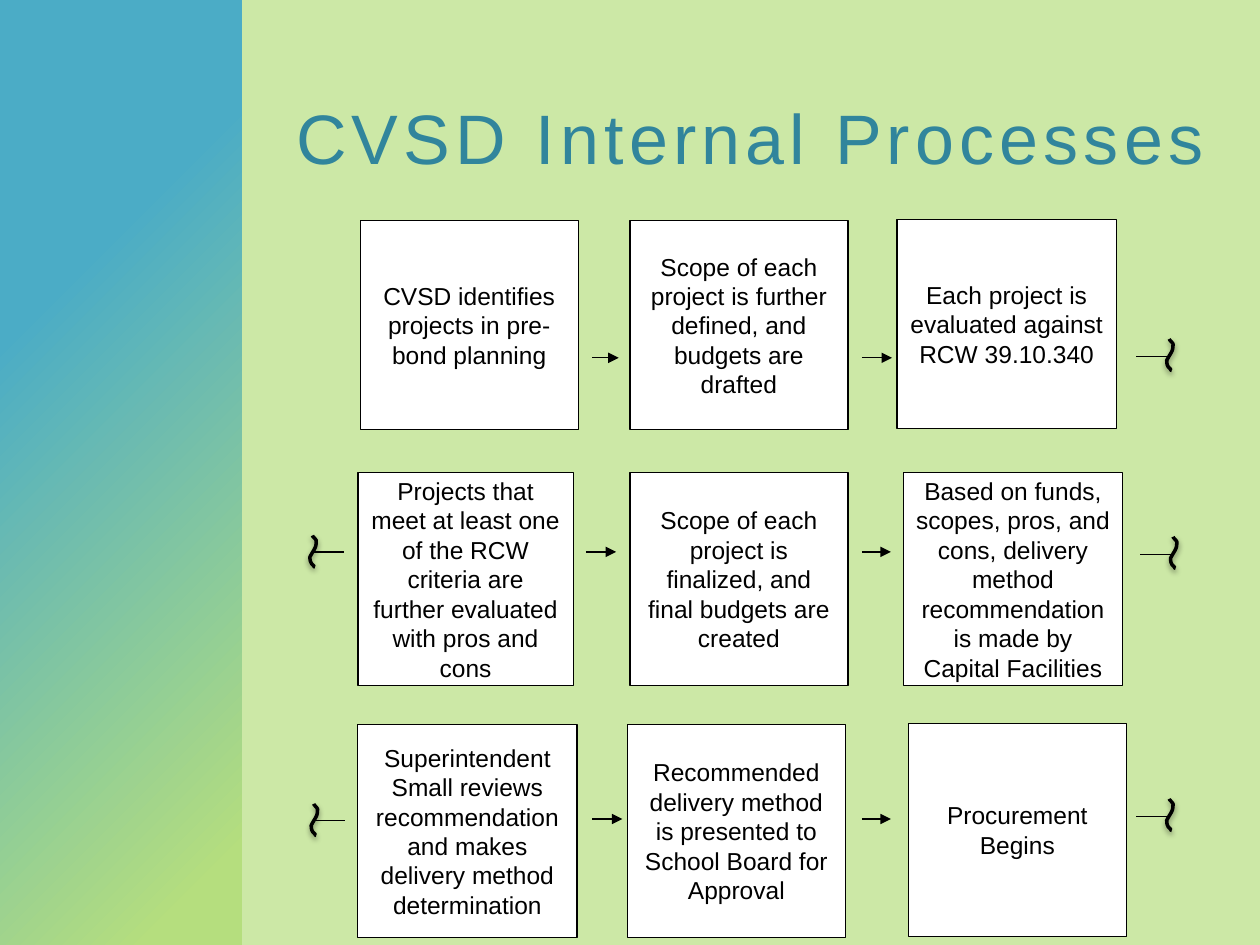
from lxml.etree import SubElement
from pptx import Presentation
from pptx.dml.color import RGBColor
from pptx.enum.shapes import MSO_CONNECTOR, MSO_SHAPE
from pptx.enum.text import MSO_ANCHOR, PP_ALIGN
from pptx.oxml.ns import qn
from pptx.util import Inches, Pt

COLORS = {
    "bg": "CCE8A6", "green": "B5DE7E", "blue": "4BACC6",
    "title": "31859C", "black": "000000", "white": "FFFFFF",
}
RGB = {name: RGBColor.from_string(value) for name, value in COLORS.items()}


def add_text(sp, text, size=14, color="black", align=PP_ALIGN.CENTER,
             anchor=MSO_ANCHOR.MIDDLE, margin=None, leading=None, spacing=None):
    tf = sp.text_frame
    tf.word_wrap = True
    tf.vertical_anchor = anchor
    if margin is not None:
        tf.margin_left = tf.margin_right = Inches(margin)
        tf.margin_top = tf.margin_bottom = Inches(margin)
    p = tf.paragraphs[0]
    p.alignment = align
    if leading:
        p.line_spacing = Pt(leading)
    r = p.add_run()
    r.text = text
    r.font.name = "Arial"
    r.font.size = Pt(size)
    r.font.color.rgb = RGB[color]
    if spacing:
        r._r.get_or_add_rPr().set("spc", str(spacing * 100))


def add_line(shapes, x, y, length, arrow=False):
    line = shapes.add_connector(MSO_CONNECTOR.STRAIGHT, Inches(x), Inches(y),
                                Inches(x + length), Inches(y))
    line.line.color.rgb = RGB["black"]
    line.line.width = Pt(0.75)
    if arrow:
        SubElement(line.line._get_or_add_ln(), qn("a:tailEnd"), type="triangle")
    SubElement(line._element.spPr, qn("a:effectLst"))


prs = Presentation()
prs.slide_width, prs.slide_height = Inches(10), Inches(7.5)
s = prs.slides.add_slide(prs.slide_layouts[6])
s.background.fill.solid()
s.background.fill.fore_color.rgb = RGB["bg"]

band = s.shapes.add_shape(MSO_SHAPE.RECTANGLE, Inches(-0.01), 0, Inches(1.93), Inches(7.5))
band.shadow.inherit = False
band.line.fill.background()
band.fill.gradient()
for stop, color, position in zip(band.fill.gradient_stops, ("green", "blue"), (0.08, 0.71)):
    stop.color.rgb = RGB[color]
    stop.position = position
grad = band._element.spPr.find(qn("a:gradFill"))
grad.remove(grad.find(qn("a:lin")))
radial = SubElement(grad, qn("a:path"), path="circle")
SubElement(radial, qn("a:fillToRect"), l="100000", t="100000")

title = s.shapes.add_textbox(Inches(2.35), Inches(0.89), Inches(7.4), Inches(0.66))
add_text(title, "CVSD Internal Processes", size=40, color="title", align=PP_ALIGN.LEFT,
         anchor=MSO_ANCHOR.TOP, margin=0, leading=37.7, spacing=3)

steps = [
    (2.86, 1.75, 1.73, 1.66, "CVSD identifies projects in pre-bond planning"),
    (5, 1.75, 1.73, 1.66, "Scope of each project is further defined, and budgets are drafted"),
    (7.12, 1.74, 1.74, 1.66, "Each project is evaluated against RCW 39.10.340"),
    (2.84, 3.75, 1.71, 1.69, "Projects that meet at least one of the RCW criteria are "
                             "further evaluated with pros and cons"),
    (5, 3.75, 1.73, 1.69, "Scope of each project is finalized, and final budgets are created"),
    (7.17, 3.75, 1.74, 1.69, "Based on funds, scopes, pros, and cons, delivery method "
                             "recommendation is made by Capital Facilities"),
    (2.84, 5.75, 1.74, 1.69, "Superintendent Small reviews recommendation and makes "
                             "delivery method determination"),
    (4.98, 5.75, 1.73, 1.69, "Recommended delivery method is presented to School Board "
                             "for Approval"),
    (7.21, 5.74, 1.73, 1.69, "Procurement Begins"),
]
for x, y, w, h, text in steps:
    sp = s.shapes.add_shape(MSO_SHAPE.RECTANGLE, Inches(x), Inches(y), Inches(w), Inches(h))
    sp.shadow.inherit = False
    sp.fill.solid()
    sp.fill.fore_color.rgb = RGB["white"]
    sp.line.color.rgb = RGB["black"]
    sp.line.width = Pt(0.75)
    add_text(sp, text)

arrows = [(4.7, 2.84, 0.21), (6.84, 2.84, 0.24), (4.65, 4.38, 0.24),
          (6.84, 4.38, 0.23), (4.7, 6.5, 0.24), (6.84, 6.5, 0.23)]
for x, y, length in arrows:
    add_line(s.shapes, x, y, length, arrow=True)

start = (0.02, 0)
curves = [
    ((0.02, 0.01), (0.04, 0.02), (0.05, 0.04)),
    ((0.05, 0.06), (0.05, 0.08), (0.04, 0.1)),
    ((0.03, 0.12), (0.01, 0.15), (0, 0.17)),
    ((0, 0.19), (0, 0.22), (0.03, 0.24)),
    ((0.03, 0.25), (0.04, 0.25), (0.04, 0.25)),
]
wave = [start]
for c1, c2, end in curves:
    begin = wave[-1]
    for t in (0.25, 0.5, 0.75, 1):
        weights = ((1 - t) ** 3, 3 * t * (1 - t) ** 2, 3 * t ** 2 * (1 - t), t ** 3)
        wave.append(tuple(sum(k * pt[axis] for k, pt in zip(weights, (begin, c1, c2, end)))
                          for axis in (0, 1)))

breaks = [(2.49, 4.38, 2.46, 4.25), (9.02, 2.83, 9.26, 2.69), (9.05, 4.4, 9.29, 4.26),
          (9.02, 6.48, 9.26, 6.34), (2.5, 6.51, 2.47, 6.38)]
for line_x, line_y, x, y in breaks:
    group = s.shapes.add_group_shape()
    add_line(group.shapes, line_x, line_y, 0.24)
    pts = [(Inches(x + dx), Inches(y + dy)) for dx, dy in wave]
    builder = group.shapes.build_freeform(*pts[0])
    builder.add_line_segments(pts[1:], close=False)
    mark = builder.convert_to_shape()
    mark.fill.background()
    mark.line.color.rgb = RGB["black"]
    mark.line.width = Pt(2)
    mark.shadow.inherit = False
    shadow = SubElement(mark._element.spPr.find(qn("a:effectLst")), qn("a:outerShdw"),
                        blurRad=str(Pt(3.1)), dist=str(Pt(1.6)), dir="5400000",
                        rotWithShape="0")
    tint = SubElement(shadow, qn("a:srgbClr"), val=COLORS["black"])
    SubElement(tint, qn("a:alpha"), val="38000")

prs.save("out.pptx")
